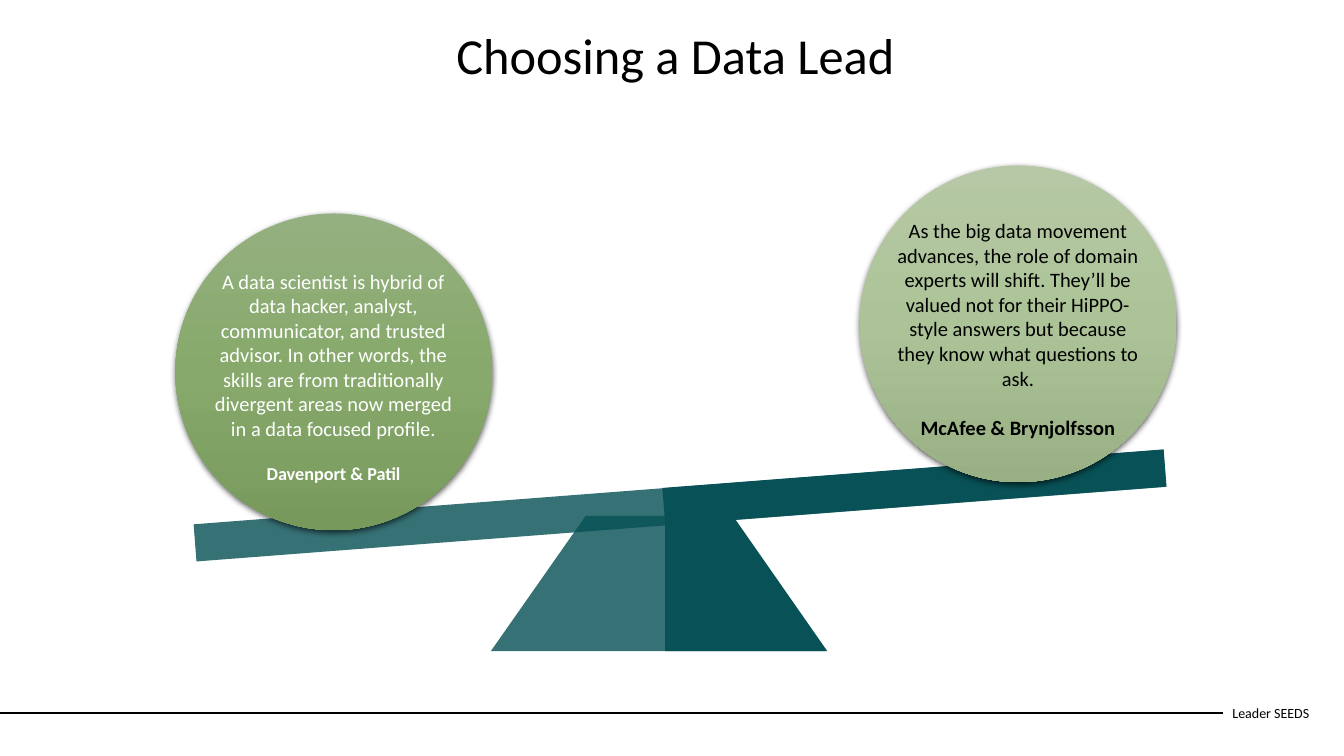
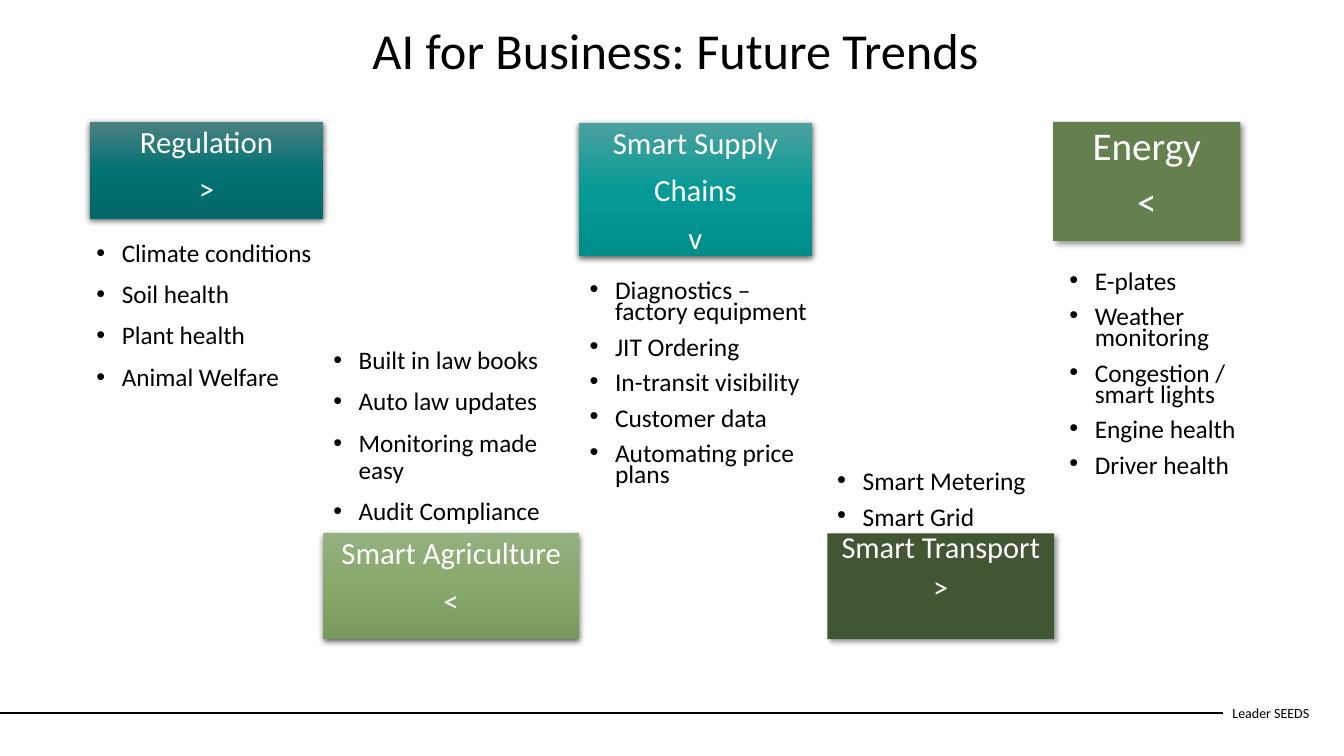
from lxml.etree import SubElement
from pptx import Presentation
from pptx.dml.color import RGBColor
from pptx.enum.shapes import MSO_CONNECTOR, MSO_SHAPE
from pptx.enum.text import MSO_ANCHOR, MSO_AUTO_SIZE, PP_ALIGN
from pptx.oxml.ns import qn
from pptx.util import Cm, Pt

FONT = "Calibri"
COLORS = {
    "black": "000000", "white": "FFFFFF", "petrol": "085156",
    "moss": "65804F", "forest": "435634",
}
GRADIENTS = {
    "pale": ("B6C8A5", "ACC397", "99B084"),
    "green": ("94B080", "87A96B", "77995C"),
    "teal": ("4B8081", "037273", "006869"),
    "aqua": ("4BA19E", "069A96", "008E8B"),
}
# opacity %, blur pt, distance pt, direction in degrees
SHADOWS = {"soft": (63, 4.5, 1.5, 90), "offset": (40, 4, 3, 45)}

FOOTER = "Leader SEEDS"
FOOTER_X, FOOTER_Y = 30.81, 17.96

SEESAW_TITLE = "Choosing a Data Lead"
PIVOT_TOP, PIVOT_BOTTOM = 13, 16.41
# top left, top right, bottom right, bottom left, opacity %
PIVOT = [(14.76, 18.39, 20.78, 12.37, 81), (16.76, 18.47, 20.85, 16.76, 100)]
# box, opacity %
PLANKS = [((4.88, 12.27, 24.51, 0.94), 81), ((16.71, 11.81, 12.67, 0.94), 100)]
PLANK_TILT = -4.4
BALL = 7.98
QUOTES = [
    dict(at=(21.67, 4.17), text_top=5.38, fill="pale", color="black",
         quote="As the big data movement advances, the role of domain experts will "
               "shift. They’ll be valued not for their HiPPO-style answers but because "
               "they know what questions to ask.",
         author="McAfee & Brynjolfsson", author_size=14.6),
    dict(at=(4.42, 5.38), text_top=6.65, fill="green", color="white",
         quote="A data scientist is hybrid of data hacker, analyst, communicator, and "
               "trusted advisor. In other words, the skills are from traditionally "
               "divergent areas now merged in a data focused profile.",
         author="Davenport & Patil", author_size=13),
]

TRENDS_TITLE = "AI for Business: Future Trends"
TRENDS = [
    dict(head=["Regulation", ">"], box=(2.26, 3.07, 5.89, 2.44), fill="teal",
         size=22, spacing=0.9,
         items=["Climate conditions", "Soil health", "Plant health", "Animal Welfare"],
         items_box=(2.18, 5.94, 6.99, 5.38), items_size=18, items_spacing=0.9),
    dict(head=["Smart Agriculture", "<"], box=(8.15, 13.44, 6.45, 2.67), fill="green",
         size=22, spacing=0.9,
         items=["Built in law books", "Auto law updates", "Monitoring made easy",
                "Audit Compliance"],
         items_box=(8.15, 8.64, 5.89, 4.39), items_size=18, items_spacing=0.9),
    dict(head=["Smart Supply", "Chains", "v"], box=(14.58, 3.1, 5.89, 3.35),
         fill="aqua", size=22, spacing=0.9,
         items=["Diagnostics – factory equipment", "JIT Ordering",
                "In-transit visibility", "Customer data", "Automating price plans"],
         items_box=(14.61, 6.99, 6.25, 7.04), items_size=18.2, items_spacing=0.7),
    dict(head=["Smart Transport", ">"], box=(20.85, 13.44, 5.72, 2.67), fill="forest",
         size=21.7, spacing=0.7,
         items=["Smart Metering", "Smart Grid"],
         items_box=(20.85, 11.81, 5.87, 1.85), items_size=18.2, items_spacing=0.7),
    dict(head=["Energy", "<"], box=(26.54, 3.07, 4.72, 3), fill="moss",
         size=28, spacing=0.9,
         items=["E-plates", "Weather monitoring", "Congestion / smart lights",
                "Engine health", "Driver health"],
         items_box=(26.7, 6.76, 5.92, 5.77), items_size=18.1, items_spacing=0.7),
]


def rgb(name):
    return RGBColor.from_string(COLORS[name])


def cm_box(box):
    return [Cm(v) for v in box]


def write(tf, lines, size, color="black", align=PP_ALIGN.LEFT, spacing=1.0,
          before=10, bullet=False, anchor=MSO_ANCHOR.TOP):
    """Fill a text frame, one paragraph a line, and return the paragraphs."""
    tf.word_wrap = True
    tf.auto_size = MSO_AUTO_SIZE.NONE
    tf.vertical_anchor = anchor
    tf.text = "\n".join(lines)
    for i, p in enumerate(tf.paragraphs):
        p.alignment = align
        p.line_spacing = spacing
        p.space_before = Pt(before if i else 0)
        if bullet:
            pPr = p._p.get_or_add_pPr()
            pPr.set("marL", str(Cm(0.64)))
            pPr.set("indent", str(-Cm(0.64)))
            SubElement(pPr, qn("a:buFont"), typeface="Arial")
            SubElement(pPr, qn("a:buChar"), char="•")
        for r in p.runs:
            r.font.name = FONT
            r.font.size = Pt(size)
            r.font.color.rgb = rgb(color)
    return tf.paragraphs


def add_text(slide, box, lines, size, **style):
    tf = slide.shapes.add_textbox(*cm_box(box)).text_frame
    return write(tf, lines, size, **style)


def paint(sp, fill, opacity=100, shadow=None):
    """Give a shape a flat or gradient fill, no outline and an optional shadow."""
    spPr = sp.element.spPr
    sp.line.fill.background()
    if fill in GRADIENTS:
        sp.fill.gradient()
        sp.fill.gradient_angle = 270
        stops = spPr.find(".//" + qn("a:gsLst"))
        for stop in list(stops):
            stops.remove(stop)
        for i, color in enumerate(GRADIENTS[fill]):
            gs = SubElement(stops, qn("a:gs"), pos=str(i * 50000))
            SubElement(gs, qn("a:srgbClr"), val=color)
    else:
        sp.fill.solid()
        sp.fill.fore_color.rgb = rgb(fill)
        if opacity < 100:
            clr = spPr.find(".//" + qn("a:srgbClr"))
            SubElement(clr, qn("a:alpha"), val=str(opacity * 1000))
    sp.shadow.inherit = False
    if shadow:
        alpha, blur, dist, angle = SHADOWS[shadow]
        outer = SubElement(spPr.find(qn("a:effectLst")), qn("a:outerShdw"),
                           blurRad=str(Pt(blur)), dist=str(Pt(dist)),
                           dir=str(angle * 60000), algn="ctr", rotWithShape="0")
        clr = SubElement(outer, qn("a:srgbClr"), val=COLORS["black"])
        SubElement(clr, qn("a:alpha"), val=str(alpha * 1000))


def add_block(slide, kind, box, fill, **look):
    sp = slide.shapes.add_shape(kind, *cm_box(box))
    paint(sp, fill, **look)
    return sp


def add_slide(prs, title, title_box, spacing):
    """Start a slide with the shared title style, footer rule and footer text."""
    s = prs.slides.add_slide(prs.slide_layouts[5])
    heading = s.shapes.title
    heading.left, heading.top, heading.width, heading.height = cm_box(title_box)
    write(heading.text_frame, [title], 36, align=PP_ALIGN.CENTER, spacing=spacing)
    add_text(s, (FOOTER_X, 17.45, 2.57, 1.02), [FOOTER], 10, anchor=MSO_ANCHOR.MIDDLE)
    rule = s.shapes.add_connector(MSO_CONNECTOR.STRAIGHT, 0, Cm(FOOTER_Y),
                                  Cm(FOOTER_X), Cm(FOOTER_Y))
    rule.line.color.rgb = rgb("black")
    rule.line.width = Pt(1.5)
    SubElement(rule.element.spPr, qn("a:effectLst"))
    return s


def add_seesaw(slide):
    for top_left, top_right, bottom_right, bottom_left, opacity in PIVOT:
        corners = [(Cm(x), Cm(y)) for x, y in (
            (top_left, PIVOT_TOP), (top_right, PIVOT_TOP),
            (bottom_right, PIVOT_BOTTOM), (bottom_left, PIVOT_BOTTOM))]
        outline = slide.shapes.build_freeform(*corners[0], scale=1.0)
        outline.add_line_segments(corners[1:], close=True)
        paint(outline.convert_to_shape(), "petrol", opacity)
    for box, opacity in PLANKS:
        plank = add_block(slide, MSO_SHAPE.RECTANGLE, box, "petrol", opacity=opacity)
        plank.rotation = PLANK_TILT


def add_quote(slide, q):
    left, top = q["at"]
    add_block(slide, MSO_SHAPE.OVAL, (left, top, BALL, BALL), q["fill"], shadow="soft")
    # The gap above the author is one line of the author's size
    author = add_text(slide, (left + 0.66, q["text_top"], 6.65, 6.5),
                      [q["quote"], q["author"]], 14.6, color=q["color"],
                      align=PP_ALIGN.CENTER, before=q["author_size"] * 1.22)[1]
    author.runs[0].font.bold = True
    author.runs[0].font.size = Pt(q["author_size"])


def add_trend(slide, t):
    shadow = "soft" if t["fill"] in GRADIENTS else "offset"
    sp = add_block(slide, MSO_SHAPE.RECTANGLE, t["box"], t["fill"], shadow=shadow)
    write(sp.text_frame, t["head"], t["size"], color="white",
          align=PP_ALIGN.CENTER, spacing=t["spacing"])
    add_text(slide, t["items_box"], t["items"], t["items_size"],
             spacing=t["items_spacing"], bullet=True)


def main():
    prs = Presentation()
    prs.slide_width, prs.slide_height = Cm(33.87), Cm(19.05)

    s = add_slide(prs, SEESAW_TITLE, (8.56, 0.48, 16.92, 1.78), 1.0)
    add_seesaw(s)
    for quote in QUOTES:
        add_quote(s, quote)

    s = add_slide(prs, TRENDS_TITLE, (2.31, 0.53, 29.44, 2.24), 0.9)
    for trend in TRENDS:
        add_trend(s, trend)

    prs.save("out.pptx")


if __name__ == "__main__":
    main()
